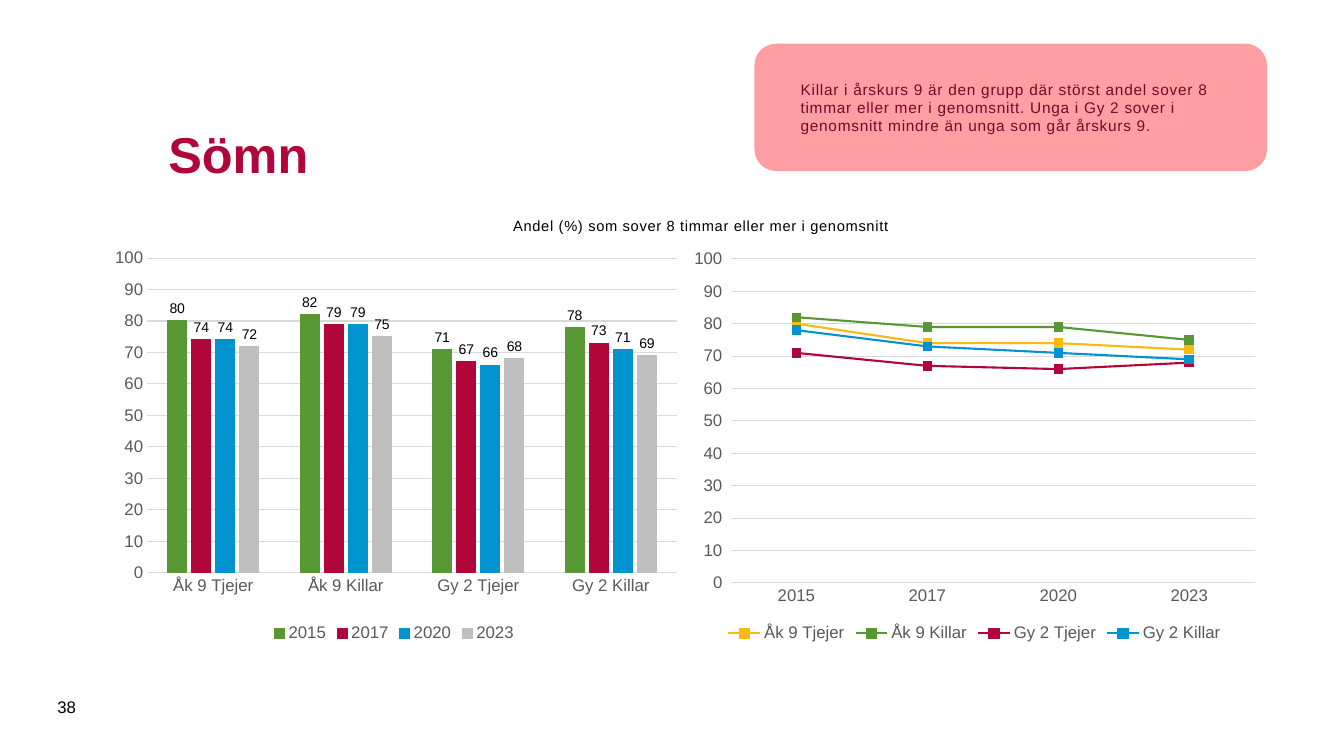
from lxml import etree
from pptx import Presentation
from pptx.chart.data import CategoryChartData as ChartData
from pptx.dml.color import RGBColor
from pptx.enum.chart import (XL_CHART_TYPE as CT, XL_LABEL_POSITION as LabelPos,
                             XL_LEGEND_POSITION as LegendPos, XL_MARKER_STYLE as Marker,
                             XL_TICK_MARK as Tick)
from pptx.enum.shapes import MSO_SHAPE as Shape
from pptx.enum.text import MSO_ANCHOR as Anchor, PP_ALIGN as Align
from pptx.oxml import parse_xml
from pptx.oxml.ns import nsdecls, qn
from pptx.util import Inches, Pt

C = {"red": "B1063A", "green": "579835", "blue": "0093D0", "yellow": "FDB913",
     "silver": "BFBFBF", "grid": "D9D9D9", "grey": "595959", "black": "000000",
     "pink": "FF9DA2", "wine": "790726"}
FONT = "Arial"
YEARS = ["2015", "2017", "2020", "2023"]
YEAR_COLORS = ["green", "red", "blue", "silver"]
GROUPS = {"Åk 9 Tjejer": ("yellow", [80, 74, 74, 72]),
          "Åk 9 Killar": ("green", [82, 79, 79, 75]),
          "Gy 2 Tjejer": ("red", [71, 67, 66, 68]),
          "Gy 2 Killar": ("blue", [78, 73, 71, 69])}


def rgb(name):
    """Return the palette colour called name."""
    return RGBColor.from_string(C[name])


def set_font(font, size, color, bold=False):
    """Apply the slide typeface with a size and colour."""
    font.name, font.size, font.bold = FONT, Pt(size), bold
    font.color.rgb = rgb(color)


def add_run(p, text, size, color, bold=False, spacing=0):
    """Append one formatted run, with letter spacing in points."""
    r = p.add_run()
    r.text = text
    set_font(r.font, size, color, bold)
    if spacing:
        r._r.get_or_add_rPr().set("spc", str(int(spacing * 100)))


def add_title(s, box, text):
    """Place the title placeholder in the box."""
    sp = s.shapes.title
    sp.left, sp.top, sp.width, sp.height = map(Inches, box)
    tf = sp.text_frame
    tf.vertical_anchor = Anchor.MIDDLE
    p = tf.paragraphs[0]
    p.alignment = Align.LEFT
    add_run(p, text, 36, "red", bold=True)


def add_label(s, box, text, size, align=Align.LEFT, anchor=Anchor.TOP, spacing=0):
    """Place a one-paragraph text box."""
    tf = s.shapes.add_textbox(*map(Inches, box)).text_frame
    tf.word_wrap = True
    tf.vertical_anchor = anchor
    p = tf.paragraphs[0]
    p.alignment = align
    add_run(p, text, size, "black", spacing=spacing)


def add_callout(s, box, text):
    """Place the rounded summary panel."""
    sp = s.shapes.add_shape(Shape.ROUNDED_RECTANGLE, *map(Inches, box))
    sp.shadow.inherit = False
    sp.fill.solid()
    sp.fill.fore_color.rgb = rgb("pink")
    fill_color = sp._element.spPr.find(qn("a:solidFill"))[0]
    etree.SubElement(fill_color, qn("a:alpha")).set("val", "98000")
    sp.line.color.rgb = rgb("pink")
    sp.line.width = Pt(1)
    tf = sp.text_frame
    tf.word_wrap = True
    tf.vertical_anchor = Anchor.MIDDLE
    tf.margin_left = tf.margin_right = Inches(0.39)
    tf.margin_top = tf.margin_bottom = Inches(0.2)
    p = tf.paragraphs[0]
    p.alignment = Align.LEFT
    add_run(p, text, 11, "wine", spacing=0.5)


def add_chart(s, box, kind, cats, series, number_format):
    """Place a chart with the shared axis, grid and legend style."""
    data = ChartData()
    data.categories = cats
    for name, vals in series:
        data.add_series(name, vals)
    chart = s.shapes.add_chart(kind, *map(Inches, box), data).chart
    set_font(chart.font, 10, "black")
    chart.has_title = False
    chart.has_legend = True
    chart.legend.position = LegendPos.BOTTOM
    chart.legend.include_in_layout = False
    set_font(chart.legend.font, 12, "grey")
    cat, val = chart.category_axis, chart.value_axis
    for axis in (cat, val):
        axis.major_tick_mark = axis.minor_tick_mark = Tick.NONE
        set_font(axis.tick_labels.font, 12, "grey")
    val.minimum_scale, val.maximum_scale, val.major_unit = 0, 100, 10
    val.tick_labels.number_format = number_format
    val.tick_labels.number_format_is_linked = False
    val.format.line.fill.background()
    for line in (cat.format.line, val.major_gridlines.format.line):
        line.color.rgb = rgb("grid")
        line.width = Pt(0.75)
    chart.plots[0].vary_by_categories = False
    return chart


def set_plot_area(chart, x, y, w, h):
    """Fix the inner plot area as fractions of the chart."""
    area = chart._chartSpace.chart.plotArea
    for old in area.findall(qn("c:layout")):
        area.remove(old)
    sizes = "".join(f'<c:{tag} val="{v}"/>' for tag, v in zip("xywh", (x, y, w, h)))
    area.insert(0, parse_xml(
        f'<c:layout {nsdecls("c")}><c:manualLayout><c:layoutTarget val="inner"/>'
        f'<c:xMode val="edge"/><c:yMode val="edge"/>{sizes}</c:manualLayout></c:layout>'))


def add_group_columns(s, box):
    """Place the columns that compare years within each group."""
    by_year = zip(*(vals for _, vals in GROUPS.values()))
    fmt = "#,##0;#,##0"
    chart = add_chart(s, box, CT.COLUMN_CLUSTERED, list(GROUPS), zip(YEARS, by_year), fmt)
    set_plot_area(chart, 0.086, 0.068, 0.888, 0.756)
    plot = chart.plots[0]
    plot.gap_width, plot.overlap = 219, -27
    for ser, color in zip(plot.series, YEAR_COLORS):
        ser.format.fill.solid()
        ser.format.fill.fore_color.rgb = rgb(color)
        ser.format.line.color.rgb = rgb(color)
        ser.format.line.width = Pt(0.75)
        labels = ser.data_labels
        labels.show_value = True
        labels.position = LabelPos.OUTSIDE_END
        labels.number_format = fmt
        labels.number_format_is_linked = False
        set_font(labels.font, 10, "black")


def add_trend_lines(s, box):
    """Place the lines that follow each group over the years."""
    series = [(name, vals) for name, (_, vals) in GROUPS.items()]
    chart = add_chart(s, box, CT.LINE_MARKERS, YEARS, series, "#,##0_);\\(#,##0\\)")
    for ser, (color, _) in zip(chart.plots[0].series, GROUPS.values()):
        ser.smooth = False
        ser.format.line.color.rgb = rgb(color)
        ser.format.line.width = Pt(1.5)
        ser.marker.style, ser.marker.size = Marker.SQUARE, 6
        ser.marker.format.fill.solid()
        ser.marker.format.fill.fore_color.rgb = rgb(color)
        ser.marker.format.line.color.rgb = rgb(color)


def main():
    """Build the sleep slide and save it."""
    prs = Presentation()
    prs.slide_width, prs.slide_height = Inches(13.33), Inches(7.5)
    s = prs.slides.add_slide(prs.slide_layouts[5])
    add_title(s, (1.57, 0.81, 10.24, 1.42), "Sömn")
    add_label(s, (0.47, 6.81, 0.57, 0.4), "38", 12, anchor=Anchor.MIDDLE)
    add_group_columns(s, (0.95, 2.28, 5.92, 4.13))
    add_trend_lines(s, (6.77, 2.4, 5.79, 4.01))
    add_label(s, (3.62, 2.1, 6.67, 0.28),
              "Andel (%) som sover 8 timmar eller mer i genomsnitt",
              10.5, align=Align.CENTER, spacing=0.5)
    add_callout(s, (7.49, 0.44, 5.07, 1.25),
                "Killar i årskurs 9 är den grupp där störst andel sover 8 timmar eller mer "
                "i genomsnitt. Unga i Gy 2 sover i genomsnitt mindre än unga som går årskurs 9.")
    prs.save("out.pptx")


if __name__ == "__main__":
    main()
